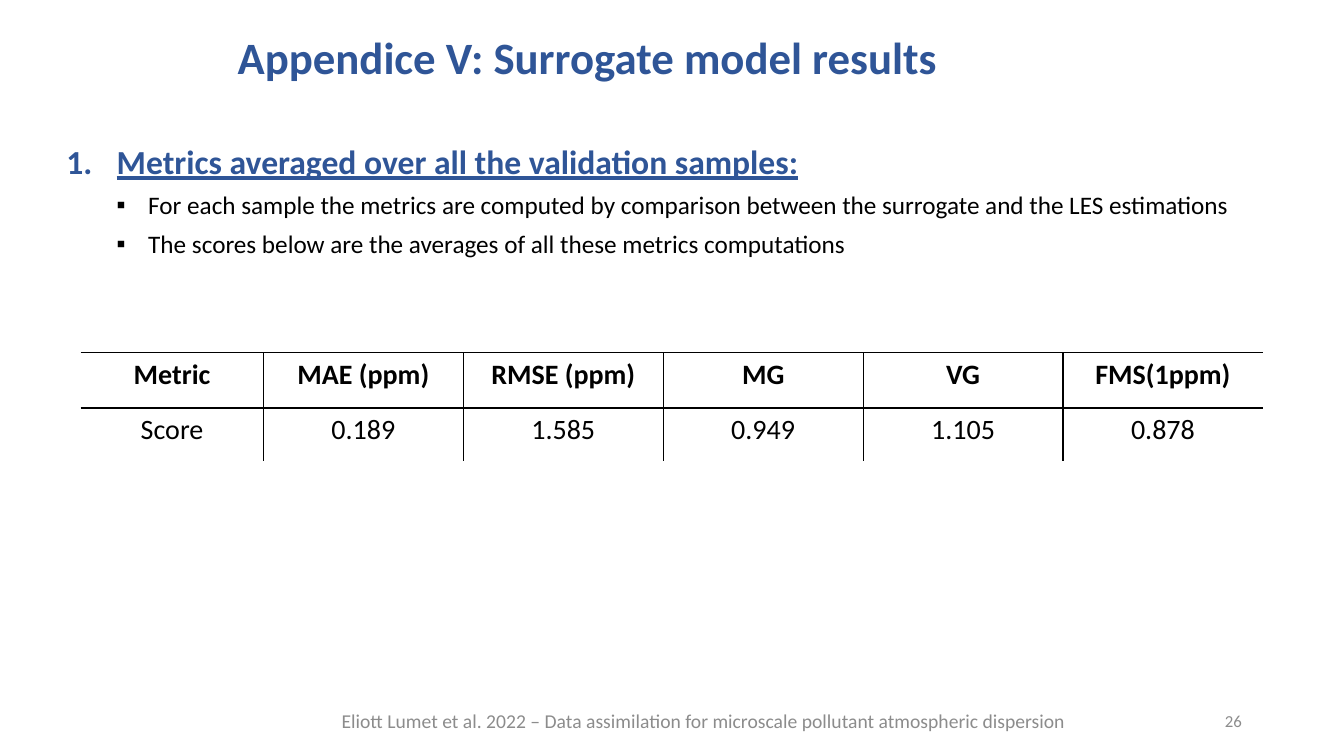
from lxml.etree import SubElement
from pptx import Presentation
from pptx.dml.color import RGBColor
from pptx.enum.text import MSO_ANCHOR as Anchor, PP_ALIGN as Align
from pptx.oxml.ns import qn
from pptx.util import Pt

FONT = "Calibri"
COLORS = {"heading": "2F5597", "body": "000000", "footer": "8C8C8C", "rule": "000000"}

SCORES = [
    ("Metric", "MAE (ppm)", "RMSE (ppm)", "MG", "VG", "FMS(1ppm)"),
    ("Score", "0.189", "1.585", "0.949", "1.105", "0.878"),
]


def format_text(paragraph, size, color, bold=False, underline=False):
    for run in paragraph.runs:
        font = run.font
        font.name, font.size = FONT, Pt(size)
        font.bold, font.underline = bold, underline
        font.color.rgb = RGBColor.from_string(COLORS[color])


def add_text_box(slide, left, top, width, height, anchor=Anchor.MIDDLE):
    text_frame = slide.shapes.add_textbox(Pt(left), Pt(top), Pt(width), Pt(height)).text_frame
    text_frame.word_wrap = True
    text_frame.vertical_anchor = anchor
    return text_frame


def add_label(slide, text, left, top, width, height, size, color, align, bold=False):
    text_frame = add_text_box(slide, left, top, width, height)
    text_frame.text = text
    paragraph = text_frame.paragraphs[0]
    paragraph.alignment = align
    format_text(paragraph, size, color, bold)
    return paragraph


def set_bullet(paragraph, margin, hanging, tag, **attributes):
    properties = paragraph._p.get_or_add_pPr()
    properties.set("marL", str(Pt(margin)))
    properties.set("indent", str(-Pt(hanging)))
    SubElement(properties, qn("a:buFont"), typeface=FONT)
    SubElement(properties, qn(tag), **attributes)


def add_section(slide, heading, points):
    text_frame = add_text_box(slide, 40.3, 97.2, 845.3, 113.8, Anchor.TOP)
    text_frame.text = "\n".join([heading, *points])
    first, *others = text_frame.paragraphs
    set_bullet(first, 36, 36, "a:buAutoNum", type="arabicPeriod")
    format_text(first, 24, "heading", bold=True, underline=True)
    for paragraph in others:
        paragraph.level = 1
        set_bullet(paragraph, 58.5, 22.5, "a:buChar", char="▪")
        paragraph.space_before = Pt(6)
        format_text(paragraph, 18, "body")


def set_borders(cell, visible):
    properties = cell._tc.get_or_add_tcPr()
    for side in "LRTB":
        line = SubElement(properties, qn(f"a:ln{side}"), w=str(Pt(1)))
        if side in visible:
            fill = SubElement(line, qn("a:solidFill"))
            SubElement(fill, qn("a:srgbClr"), val=COLORS["rule"])
        else:
            SubElement(line, qn("a:noFill"))


def add_score_table(slide, rows, left, top, column_widths, row_heights):
    frame = slide.shapes.add_table(len(rows), len(column_widths), Pt(left), Pt(top),
                                   Pt(sum(column_widths)), Pt(sum(row_heights)))
    table = frame.table
    for column, width in zip(table.columns, column_widths):
        column.width = Pt(width)
    for row, height in zip(table.rows, row_heights):
        row.height = Pt(height)
    last_row, last_column = len(rows) - 1, len(column_widths) - 1
    for r, values in enumerate(rows):
        for c, value in enumerate(values):
            cell = table.cell(r, c)
            cell.text = value
            paragraph = cell.text_frame.paragraphs[0]
            paragraph.alignment = Align.CENTER
            format_text(paragraph, 20, "body", bold=r == 0)
            # Rules inside the grid and along its top only
            visible = "T" + "L" * (c > 0) + "R" * (c < last_column) + "B" * (r < last_row)
            set_borders(cell, visible)
            cell.fill.background()


def main():
    presentation = Presentation()
    presentation.slide_width, presentation.slide_height = Pt(960), Pt(540)
    slide = presentation.slides.add_slide(presentation.slide_layouts[6])

    # Title
    title = add_label(slide, "Appendice V: Surrogate model results",
                      162.7, 23, 782.6, 40.3, 32, "heading", Align.LEFT, bold=True)
    title.line_spacing = 0.9

    # Explanation
    add_section(slide, "Metrics averaged over all the validation samples:", [
        "For each sample the metrics are computed by comparison between the surrogate "
        "and the LES estimations",
        "The scores below are the averages of all these metrics computations",
    ])

    # Scores
    add_score_table(slide, SCORES, 57.6, 252, [130.6] + [142.8] * 5, [39.4, 38.2])

    # Footer
    add_label(slide, "Eliott Lumet et al. 2022 – Data assimilation for microscale pollutant "
              "atmospheric dispersion", 189.4, 500.4, 626.4, 28.8, 14, "footer", Align.CENTER)
    add_label(slide, "26", 678.2, 500.4, 216, 28.8, 12, "footer", Align.RIGHT)

    presentation.save("out.pptx")


if __name__ == "__main__":
    main()
